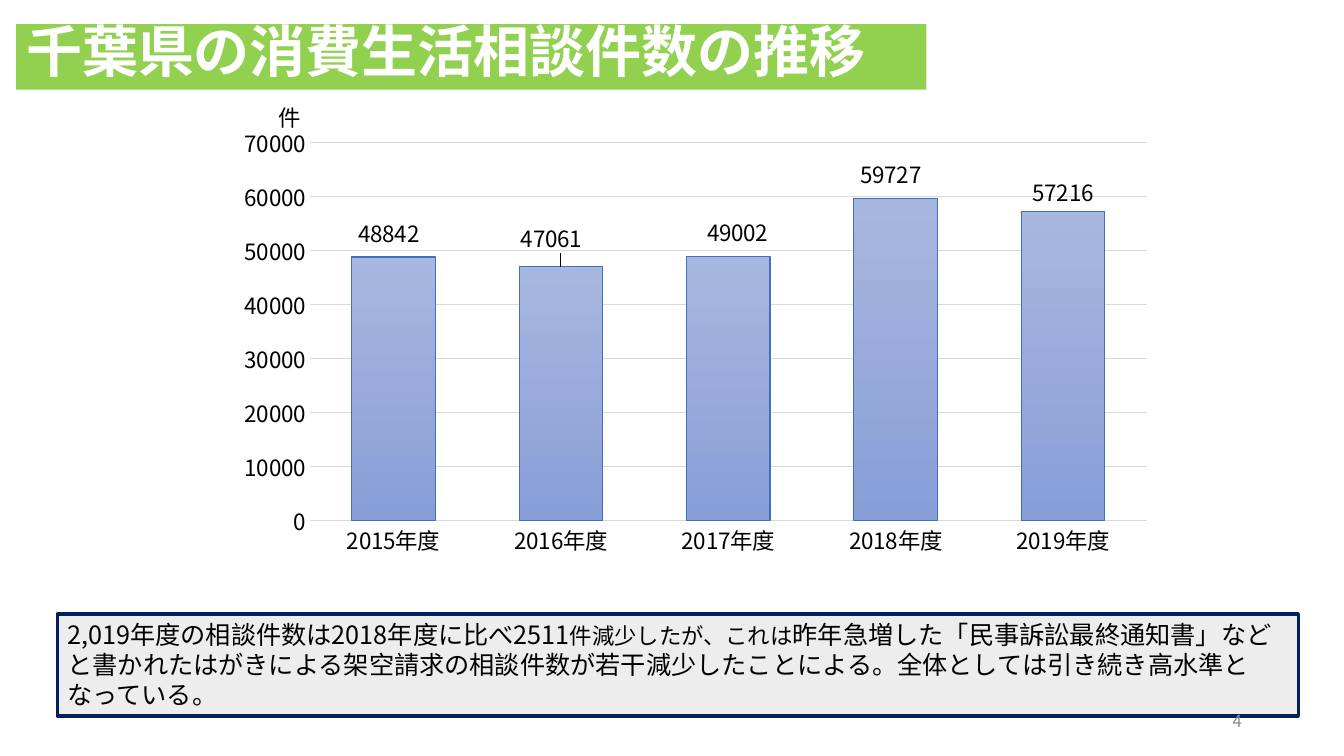
from dataclasses import dataclass

from lxml.etree import SubElement
from pptx import Presentation
from pptx.chart.data import CategoryChartData
from pptx.dml.color import RGBColor
from pptx.enum.chart import XL_CHART_TYPE, XL_LABEL_POSITION, XL_TICK_MARK
from pptx.enum.shapes import MSO_SHAPE
from pptx.enum.text import MSO_ANCHOR, PP_ALIGN
from pptx.oxml.ns import qn
from pptx.util import Cm, Pt


@dataclass(frozen=True)
class Theme:
    """Fonts, type sizes and colours of the slide."""
    face: str = "Noto Sans CJK JP"
    title_size: int = 40
    note_size: int = 18
    chart_size: int = 16
    number_size: int = 12
    ink: str = "000000"
    white: str = "FFFFFF"
    green: str = "92D050"
    navy: str = "002060"
    pale: str = "EDEDED"
    grid: str = "D9D9D9"
    muted: str = "8C8C8C"
    bar_top: str = "A8B7DF"
    bar_bottom: str = "889ED7"
    bar_edge: str = "436FC0"


THEME = Theme()
CASES = {"2015年度": 48842, "2016年度": 47061, "2017年度": 49002,
         "2018年度": 59727, "2019年度": 57216}
LABEL_SHIFTS = [(-0.005, -0.01), (-0.01, -0.02), (0.01, -0.01), (-0.005, -0.01), (0, 0)]
NOTE = [
    ("2,019年度の相談件数は2018年度に比べ2511", THEME.note_size),
    ("件減少したが、これは", THEME.chart_size),
    ("昨年急増した「民事訴訟最終通知書」などと書かれたはがきによる架空請求の相談件数が"
     "若干減少したことによる。全体としては引き続き高水準となっている。", THEME.note_size),
]


def rgb(code):
    """Turn a hex code into a colour."""
    return RGBColor.from_string(code)


def style_font(font, size, color=THEME.ink, bold=False):
    """Give a font the theme's face with a size and colour."""
    font.name, font.size, font.bold = THEME.face, Pt(size), bold
    font.color.rgb = rgb(color)


def add_run(paragraph, wording, size, color=THEME.ink, bold=False):
    """Append one run, with the face set for Japanese too."""
    run = paragraph.add_run()
    run.text = wording
    style_font(run.font, size, color, bold)
    SubElement(run.font._element, qn("a:ea"), typeface=THEME.face)


def add_panel(slide, box, fill):
    """Add a flat, left-aligned rectangle without an outline."""
    panel = slide.shapes.add_shape(MSO_SHAPE.RECTANGLE, *box)
    panel.shadow.inherit = False
    panel.fill.solid()
    panel.fill.fore_color.rgb = rgb(fill)
    panel.line.fill.background()
    panel.text_frame.word_wrap = True
    panel.text_frame.paragraphs[0].alignment = PP_ALIGN.LEFT
    return panel


def add_title(slide, box):
    """Add the green heading band."""
    band = add_panel(slide, box, THEME.green)
    band.text_frame.vertical_anchor = MSO_ANCHOR.BOTTOM
    heading = band.text_frame.paragraphs[0]
    heading.line_spacing = 0.9
    add_run(heading, "千葉県の消費生活相談件数の推移", THEME.title_size, THEME.white, True)


def add_label(slide, box, wording, size, color, alignment, anchor):
    """Add one short line of text."""
    frame = slide.shapes.add_textbox(*box).text_frame
    frame.word_wrap = True
    frame.vertical_anchor = anchor
    frame.paragraphs[0].alignment = alignment
    add_run(frame.paragraphs[0], wording, size, color)


def set_layout(layout, **places):
    """Write a manual layout as fractions of the chart."""
    manual = SubElement(layout, qn("c:manualLayout"))
    for tag, value in places.items():
        SubElement(manual, qn(f"c:{tag}"), val=str(value))


def style_axes(chart):
    """Style both axes and the gridlines."""
    for axis in (chart.category_axis, chart.value_axis):
        axis.major_tick_mark = axis.minor_tick_mark = XL_TICK_MARK.NONE
        style_font(axis.tick_labels.font, THEME.chart_size)
    scale = chart.value_axis
    scale.minimum_scale, scale.maximum_scale, scale.major_unit = 0, 70000, 10000
    scale.format.line.fill.background()
    for line in (chart.category_axis.format.line, scale.major_gridlines.format.line):
        line.color.rgb = rgb(THEME.grid)
        line.width = Pt(0.75)


def style_bars(plot):
    """Fill the bars and place their values above them."""
    plot.gap_width, plot.overlap, plot.vary_by_categories = 100, -24, False
    bars = plot.series[0]
    bars.format.fill.gradient()
    bars.format.fill.gradient_angle = 270
    for stop, color in zip(bars.format.fill.gradient_stops, (THEME.bar_top, THEME.bar_bottom)):
        stop.color.rgb = rgb(color)
    bars.format.line.color.rgb = rgb(THEME.bar_edge)
    bars.format.line.width = Pt(0.75)
    bars.data_labels.show_value = True
    for year in range(len(CASES)):
        value_label = bars.points[year].data_label
        style_font(value_label.font, THEME.chart_size)
        value_label.position = XL_LABEL_POSITION.OUTSIDE_END
    for value_label, (x, y) in zip(bars._element.iter(qn("c:dLbl")), LABEL_SHIFTS):
        layout = SubElement(value_label, qn("c:layout"))
        value_label.insert(1, layout)
        set_layout(layout, x=x, y=y)


def add_case_chart(slide, box):
    """Add the column chart of yearly cases with its unit."""
    left, top, width, height = box
    data = CategoryChartData()
    data.categories = list(CASES)
    data.add_series("相談件数", list(CASES.values()))
    chart = slide.shapes.add_chart(XL_CHART_TYPE.COLUMN_CLUSTERED, *box, data).chart
    chart.has_legend = chart.has_title = False
    style_font(chart.font, THEME.chart_size)
    style_axes(chart)
    style_bars(chart.plots[0])
    plot_area = chart._chartSpace.find(f".//{qn('c:plotArea')}")
    layout = plot_area.find(qn("c:layout"))
    if layout is None:
        layout = SubElement(plot_area, qn("c:layout"))
        plot_area.insert(0, layout)
    set_layout(layout, layoutTarget="inner", xMode="edge", yMode="edge",
               x=0.091, y=0.05, w=0.885, h=0.82)
    add_label(slide, (left + Cm(1.12), top - Cm(0.51), Cm(0.84), Cm(0.94)), "件",
              THEME.chart_size, THEME.ink, PP_ALIGN.LEFT, MSO_ANCHOR.TOP)


def add_note(slide, box):
    """Add the framed comment below the chart."""
    frame = add_panel(slide, box, THEME.pale)
    frame.line.color.rgb = rgb(THEME.navy)
    frame.line.width = Pt(2.5)
    frame.text_frame.vertical_anchor = MSO_ANCHOR.TOP
    for wording, size in NOTE:
        add_run(frame.text_frame.paragraphs[0], wording, size)


def main():
    """Build the slide and save it."""
    deck = Presentation()
    deck.slide_width, deck.slide_height = Cm(33.87), Cm(19.05)
    slide = deck.slides.add_slide(deck.slide_layouts[6])
    add_title(slide, (Cm(0.41), Cm(0.61), Cm(22.94), Cm(1.65)))
    add_case_chart(slide, (Cm(5.64), Cm(3.02), Cm(23.83), Cm(11.61)))
    add_note(slide, (Cm(1.45), Cm(15.47), Cm(31.27), Cm(2.57)))
    add_label(slide, (Cm(23.93), Cm(17.65), Cm(7.62), Cm(1.02)), "4",
              THEME.number_size, THEME.muted, PP_ALIGN.RIGHT, MSO_ANCHOR.MIDDLE)
    deck.save("out.pptx")


if __name__ == "__main__":
    main()
